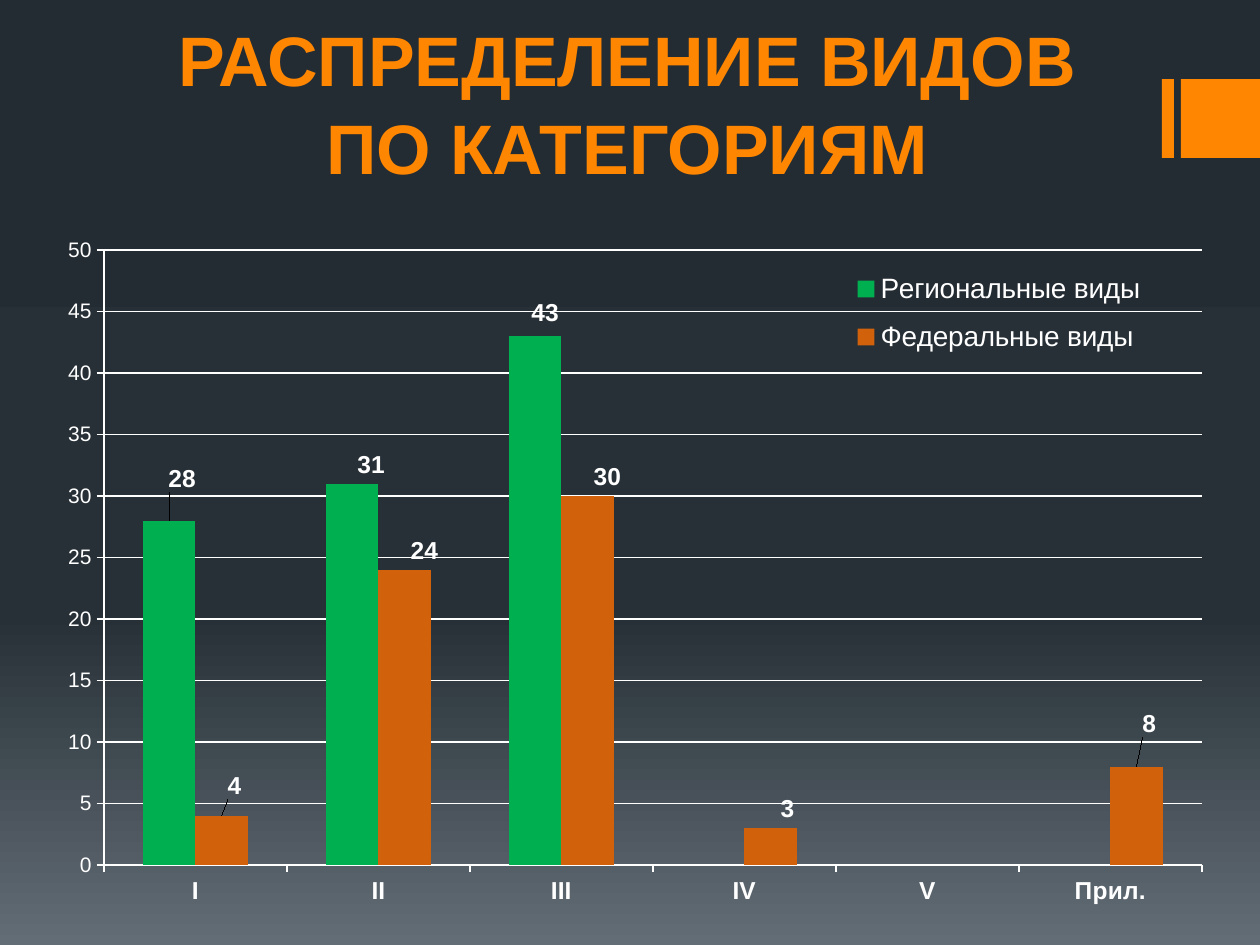
from copy import deepcopy
from dataclasses import dataclass
from typing import Any, Optional

from lxml.etree import SubElement
from pptx import Presentation
from pptx.chart.data import CategoryChartData
from pptx.dml.color import RGBColor
from pptx.enum.chart import XL_CHART_TYPE, XL_LABEL_POSITION, XL_LEGEND_POSITION, XL_TICK_MARK
from pptx.enum.shapes import MSO_SHAPE
from pptx.enum.text import MSO_ANCHOR, PP_ALIGN
from pptx.oxml.ns import qn
from pptx.util import Emu, Pt

PX_PER_INCH = 126


@dataclass(frozen=True)
class Theme:
    font: str = "Arial"
    accent: str = "FF8600"
    text: str = "FFFFFF"
    regional: str = "00B050"
    federal: str = "D2610C"
    background: tuple = ((0, "242C33"), (0.65, "273037"), (1, "636D76"))
    title_size: int = 40
    legend_size: int = 16
    label_size: int = 14
    scale_size: int = 12
    line_width: int = 1


@dataclass(frozen=True)
class Box:
    left: int
    top: int
    width: int
    height: int

    def emu(self) -> tuple:
        return tuple(px(n) for n in (self.left, self.top, self.width, self.height))


@dataclass(frozen=True)
class SpeciesGroup:
    name: str
    color: str
    counts: tuple[Optional[int], ...]
    label_shifts: dict[int, tuple[int, int]]  # category index: px right, px down


THEME = Theme()
SLIDE = Box(0, 0, 1260, 945)
TITLE = Box(123, 37, 1008, 158)
ACCENT_BARS = (Box(1162, 79, 12, 79), Box(1181, 79, 79, 79))
CHART = Box(44, 224, 1181, 694)
PLOT = Box(104, 250, 1098, 615)
LEGEND = Box(846, 256, 306, 114)

CATEGORIES = ("I", "II", "III", "IV", "V", "Прил.")
GROUPS = (
    SpeciesGroup("Региональные виды", THEME.regional, (28, 31, 43, None, None, None),
                 {0: (13, -23), 1: (19, 0), 2: (10, -4)}),
    SpeciesGroup("Федеральные виды", THEME.federal, (4, 24, 30, 3, None, 8),
                 {0: (13, -11), 1: (20, 0), 2: (20, 0), 3: (17, 0), 5: (13, -24)}),
)


def px(length: int) -> Emu:
    return Emu(round(length * 914400 / PX_PER_INCH))


def apply_format(target: Any, values: dict[str, Any]) -> None:
    for name, value in values.items():
        setattr(target, name, value)


def style_font(font: Any, size: int, color: str = THEME.text, bold: bool = False) -> None:
    apply_format(font, {"name": THEME.font, "size": Pt(size), "bold": bold})
    font.color.rgb = RGBColor.from_string(color)


def fill_solid(fill: Any, color: str) -> None:
    fill.solid()
    fill.fore_color.rgb = RGBColor.from_string(color)


def style_line(line: Any) -> None:
    line.width = Pt(THEME.line_width)
    fill_solid(line.fill, THEME.text)


def set_layout(parent: Any, index: int, values: dict[str, Any]) -> None:
    """Give a chart part a manual layout as its child at index."""
    for old in parent.findall(qn("c:layout")):
        parent.remove(old)
    layout = SubElement(parent, qn("c:layout"))
    manual = SubElement(layout, qn("c:manualLayout"))
    for name, value in values.items():
        SubElement(manual, qn(f"c:{name}")).set("val", str(value))
    parent.insert(index, layout)


def chart_fractions(box: Box) -> dict[str, Any]:
    return {
        "xMode": "edge", "yMode": "edge",
        "x": round((box.left - CHART.left) / CHART.width, 4),
        "y": round((box.top - CHART.top) / CHART.height, 4),
        "w": round(box.width / CHART.width, 4),
        "h": round(box.height / CHART.height, 4),
    }


def paint_background(slide: Any) -> None:
    fill = slide.background.fill
    fill.gradient()
    fill.gradient_angle = 270
    stop_list = slide.element.find(".//" + qn("a:gsLst"))
    stop_list.append(deepcopy(stop_list[0]))
    for stop, (position, color) in zip(fill.gradient_stops, THEME.background):
        stop.position = position
        stop.color.rgb = RGBColor.from_string(color)


def add_accent_bar(slide: Any, box: Box) -> None:
    bar = slide.shapes.add_shape(MSO_SHAPE.RECTANGLE, *box.emu())
    bar.shadow.inherit = False
    fill_solid(bar.fill, THEME.accent)
    bar.line.fill.background()


def add_title(slide: Any) -> None:
    frame = slide.shapes.add_textbox(*TITLE.emu()).text_frame
    apply_format(frame, {"word_wrap": True, "vertical_anchor": MSO_ANCHOR.BOTTOM})
    heading = frame.paragraphs[0]
    apply_format(heading, {"alignment": PP_ALIGN.CENTER, "line_spacing": 1.05})
    run = heading.add_run()
    run.text = "РАСПРЕДЕЛЕНИЕ ВИДОВ ПО КАТЕГОРИЯМ"
    style_font(run.font, THEME.title_size, THEME.accent, bold=True)


def style_group(series: Any, group: SpeciesGroup) -> None:
    fill_solid(series.format.fill, group.color)
    series.invert_if_negative = False
    labels = series.data_labels
    apply_format(labels, {"show_value": True, "position": XL_LABEL_POSITION.OUTSIDE_END})
    style_font(labels.font, THEME.label_size, bold=True)
    for index in group.label_shifts:
        label = series.points[index].data_label
        style_font(label.font, THEME.label_size, bold=True)
        label.position = XL_LABEL_POSITION.OUTSIDE_END


def add_species_chart(slide: Any) -> None:
    data = CategoryChartData()
    data.categories = CATEGORIES
    for group in GROUPS:
        data.add_series(group.name, group.counts)
    chart = slide.shapes.add_chart(XL_CHART_TYPE.COLUMN_CLUSTERED, *CHART.emu(), data).chart
    apply_format(chart, {"has_title": False, "has_legend": True})
    style_font(chart.font, THEME.scale_size)
    set_layout(chart.element.find(".//" + qn("c:plotArea")), 0,
               {"layoutTarget": "inner"} | chart_fractions(PLOT))

    # Columns and their shifted labels
    plot = chart.plots[0]
    apply_format(plot, {"gap_width": 150, "overlap": 0, "vary_by_categories": False})
    for series, group in zip(plot.series, GROUPS):
        style_group(series, group)
    shifts = [shift for group in GROUPS for shift in group.label_shifts.values()]
    for label, (right, down) in zip(chart.element.findall(".//" + qn("c:dLbl")), shifts):
        set_layout(label, 1, {"x": round(right / CHART.width, 4),
                              "y": round(down / CHART.height, 4)})

    # Axes
    apply_format(chart.value_axis, {"minimum_scale": 0, "maximum_scale": 50,
                                    "major_unit": 5, "has_major_gridlines": True})
    style_line(chart.value_axis.major_gridlines.format.line)
    for axis, size, bold in ((chart.category_axis, THEME.label_size, True),
                             (chart.value_axis, THEME.scale_size, False)):
        apply_format(axis, {"major_tick_mark": XL_TICK_MARK.OUTSIDE,
                            "minor_tick_mark": XL_TICK_MARK.NONE})
        style_line(axis.format.line)
        style_font(axis.tick_labels.font, size, bold=bold)

    # Legend over the plot
    apply_format(chart.legend, {"position": XL_LEGEND_POSITION.CORNER,
                                "include_in_layout": True})
    style_font(chart.legend.font, THEME.legend_size)
    set_layout(chart.element.find(".//" + qn("c:legend")), 1, chart_fractions(LEGEND))


def main() -> None:
    deck = Presentation()
    apply_format(deck, {"slide_width": px(SLIDE.width), "slide_height": px(SLIDE.height)})
    slide = deck.slides.add_slide(deck.slide_layouts[6])
    paint_background(slide)
    for box in ACCENT_BARS:
        add_accent_bar(slide, box)
    add_title(slide)
    add_species_chart(slide)
    deck.save("out.pptx")


if __name__ == "__main__":
    main()
